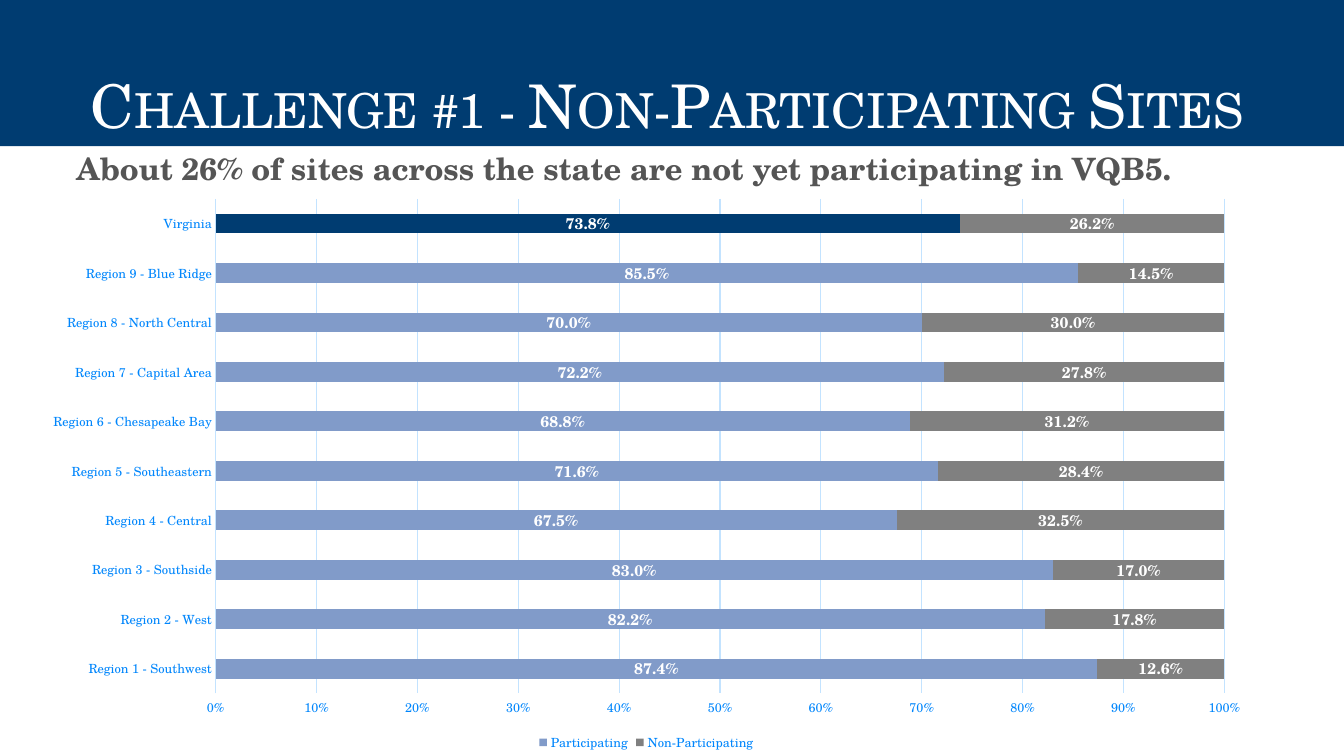
"""Build the slide on sites that do not take part."""
import pptx
import pptx.util
import pptx.dml.color
import pptx.chart.data
import pptx.enum.chart
import pptx.enum.text
import pptx.oxml

Inches = pptx.util.Inches
Pt = pptx.util.Pt
FACE = "TeX Gyre Schola"
NAVY, BLUE, GRAY = "003C71", "819BC9", "808080"
SKY, PALE, WHITE, DARK = "0086FC", "C3E3FF", "FFFFFF", "555555"

SITES = [
    ("Region 1 - Southwest", 0.874, 0.126),
    ("Region 2 - West", 0.822, 0.178),
    ("Region 3 - Southside", 0.83, 0.17),
    ("Region 4 - Central", 0.675, 0.325),
    ("Region 5 - Southeastern", 0.716, 0.284),
    ("Region 6 - Chesapeake Bay", 0.688, 0.312),
    ("Region 7 - Capital Area", 0.722, 0.278),
    ("Region 8 - North Central", 0.7, 0.3),
    ("Region 9 - Blue Ridge", 0.855, 0.145),
    ("Virginia", 0.738, 0.262),
]


def color(code):
    return pptx.dml.color.RGBColor.from_string(code)


def paint(fill, code):
    fill.solid()
    fill.fore_color.rgb = color(code)


class Deck:
    def __init__(self):
        self.prs = pptx.Presentation()
        self.prs.slide_width = Inches(13.33)
        self.prs.slide_height = Inches(7.5)
        self.slide = self.prs.slides.add_slide(self.prs.slide_layouts[5])

    def style(self, font, size, code, bold=False):
        font.name, font.size, font.bold = FACE, Pt(size), bold
        font.color.rgb = color(code)

    def label(self, shape, text, size, code, bold=False, left=0.1):
        frame = shape.text_frame
        frame.word_wrap = True
        frame.auto_size = pptx.enum.text.MSO_AUTO_SIZE.NONE
        frame.margin_left = Inches(left)
        frame.margin_right = Inches(0.1)
        frame.margin_top = frame.margin_bottom = Inches(0.05)
        para = frame.paragraphs[0]
        para.text = text
        para.line_spacing = 0.9
        para.alignment = pptx.enum.text.PP_ALIGN.LEFT
        self.style(para.font, size, code, bold)
        return para

    def title(self, text, box):
        shape = self.slide.shapes.title
        shape.left, shape.top, shape.width, shape.height = map(Inches, box)
        paint(shape.fill, NAVY)
        para = self.label(shape, text, 43, WHITE, left=0.9)
        shape.text_frame.vertical_anchor = pptx.enum.text.MSO_ANCHOR.BOTTOM
        para.runs[0]._r.get_or_add_rPr().set("cap", "small")

    def lead(self, text, box):
        shape = self.slide.shapes.add_textbox(*map(Inches, box))
        para = self.label(shape, text, 22, DARK, True)
        para.space_before = Pt(10)
        para._p.get_or_add_pPr().set("marL", str(Inches(0.2)))

    def bars(self, rows, names, box):
        enum = pptx.enum.chart
        data = pptx.chart.data.CategoryChartData(number_format="0.0%")
        cats, *cols = zip(*rows)
        data.categories = cats
        for name, vals in zip(names, cols):
            data.add_series(name, vals)
        chart = self.slide.shapes.add_chart(
            enum.XL_CHART_TYPE.BAR_STACKED_100, *map(Inches, box), data).chart
        chart.has_title = False
        self.style(chart.font, 10, NAVY)
        self.axes(chart)
        chart.has_legend = True
        chart.legend.position = enum.XL_LEGEND_POSITION.BOTTOM
        chart.legend.include_in_layout = False
        self.style(chart.legend.font, 9, SKY)
        plot = chart.plots[0]
        plot.gap_width, plot.overlap = 150, 100
        plot.vary_by_categories = False
        for series, code in zip(plot.series, (BLUE, GRAY)):
            paint(series.format.fill, code)
            labels = series.data_labels
            labels.show_value = True
            labels.position = enum.XL_LABEL_POSITION.CENTER
            labels.number_format = "0.0%"
            labels.number_format_is_linked = False
            self.style(labels.font, 11, WHITE, True)
        paint(plot.series[0].points[len(rows) - 1].format.fill, NAVY)
        self.place(chart, x=0.15, y=0.02, w=0.82, h=0.87)

    def axes(self, chart):
        cat, val = chart.category_axis, chart.value_axis
        for axis in (cat, val):
            axis.major_tick_mark = pptx.enum.chart.XL_TICK_MARK.NONE
            axis.minor_tick_mark = pptx.enum.chart.XL_TICK_MARK.NONE
            self.style(axis.tick_labels.font, 9, SKY)
        val.minimum_scale, val.maximum_scale, val.major_unit = 0, 1, 0.1
        val.tick_labels.number_format = "0%"
        val.tick_labels.number_format_is_linked = False
        val.format.line.fill.background()
        val.has_major_gridlines = True
        for line in (cat.format.line, val.major_gridlines.format.line):
            line.color.rgb = color(PALE)
            line.width = Pt(0.75)

    def place(self, chart, **sides):
        area = chart._chartSpace.chart.plotArea
        for old in area.xpath("c:layout"):
            area.remove(old)
        modes = '<c:xMode val="edge"/><c:yMode val="edge"/>'
        sizes = "".join(f'<c:{key} val="{val}"/>' for key, val in sides.items())
        area.insert(0, pptx.oxml.parse_xml(
            '<c:layout xmlns:c="http://schemas.openxmlformats.org/drawingml/2006/chart">'
            '<c:manualLayout><c:layoutTarget val="inner"/>'
            f'{modes}{sizes}</c:manualLayout></c:layout>'))


def main():
    deck = Deck()
    deck.title("Challenge #1 - Non-Participating Sites", (0, 0, 13.33, 1.45))
    deck.lead("About 26% of sites across the state are not yet participating in VQB5.",
              (0.46, 1.48, 13.27, 0.65))
    deck.bars(SITES, ("Participating", "Non-Participating"), (0.31, 1.86, 12.2, 5.64))
    deck.prs.save("out.pptx")


if __name__ == "__main__":
    main()
